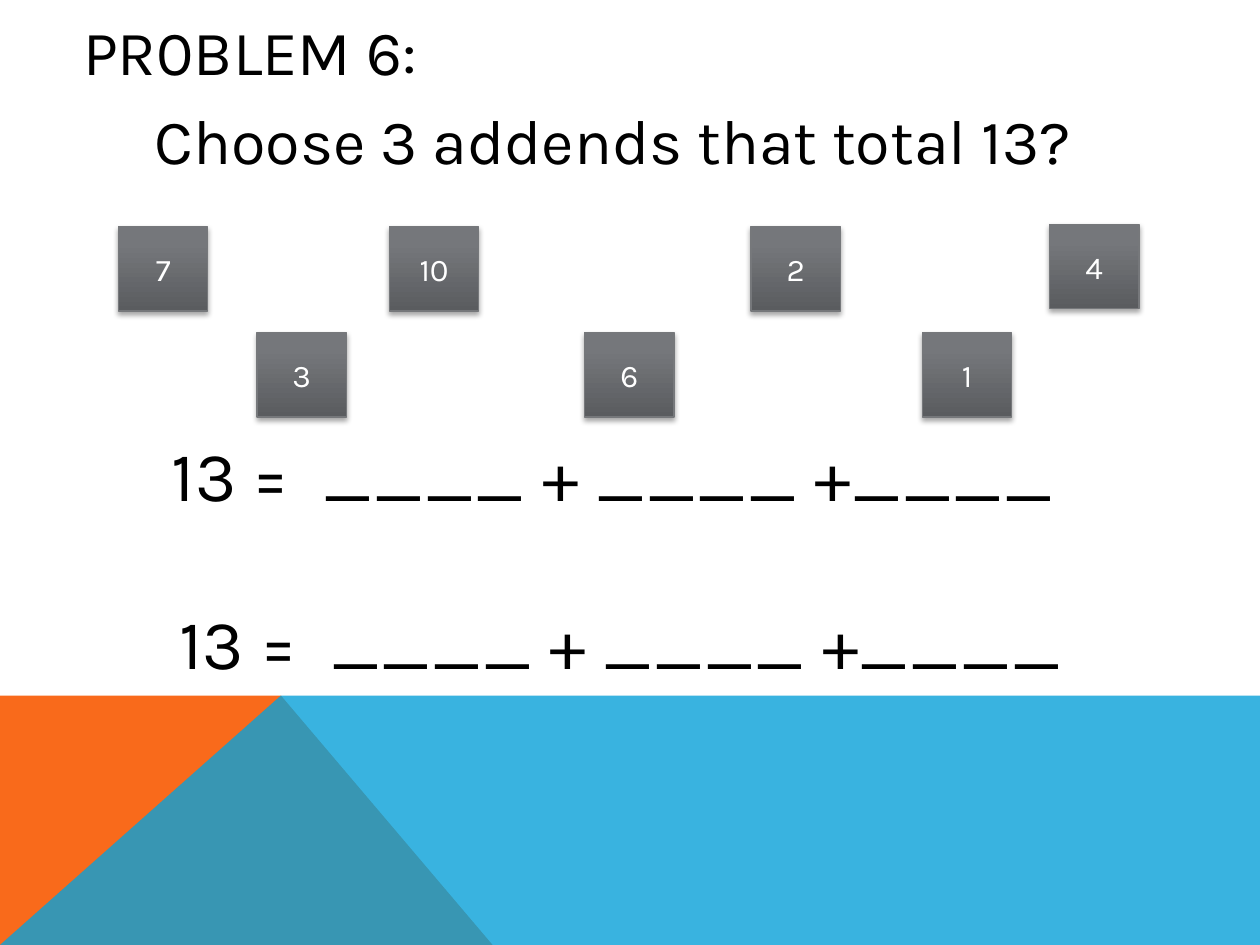
from lxml import etree
from pptx import Presentation
from pptx.dml.color import RGBColor
from pptx.enum.shapes import MSO_SHAPE
from pptx.enum.text import MSO_ANCHOR, PP_ALIGN
from pptx.oxml import parse_xml
from pptx.oxml.ns import nsdecls, qn
from pptx.util import Inches, Pt

RECT = MSO_SHAPE.RECTANGLE
MIDDLE = MSO_ANCHOR.MIDDLE
LEFT, CENTER = PP_ALIGN.LEFT, PP_ALIGN.CENTER

FONT = "Karla"
COLORS = {
    "text": "000000",
    "tile_text": "FFFFFF",
    "tile_line": "76787B",
    "tile_bottom": "5A5C5F",
    "tile_middle": "75777B",
    "tile_top": "75787C",
    "shadow": "000000",
    "orange": "F96A1B",
    "blue": "08A1D9",
}

# Bottom band
BAND_TOP, PEAK_X = 5.52, 2.23
ORANGE_POINTS = [(0, 7.5), (0, BAND_TOP), (PEAK_X, BAND_TOP), (3.91, 7.5)]
BLUE_POINTS = [(0, 7.5), (PEAK_X, BAND_TOP), (10, BAND_TOP), (10, 7.5)]

# Number tiles: label, left, top
TILE_W, TILE_H = 0.71, 0.67
UPPER, LOWER = 1.8, 2.64
TILES = [
    ("7", 0.94, UPPER), ("3", 2.04, LOWER), ("10", 3.09, UPPER),
    ("6", 4.64, LOWER), ("2", 5.96, UPPER), ("1", 7.32, LOWER),
    ("4", 8.33, 1.78),
]

# Centred lines: text, left, top, size
EQUATION = "13 =  ____ + ____ +____"
LINES = [
    ("Choose 3 addends that total 13?", 0.44, 0.73, 36),
    (EQUATION, 0.44, 3.38, 40),
    (EQUATION, 0.5, 4.71, 40),
]
LINE_W, LINE_H = 8.85, 0.76


def rgb(name):
    return RGBColor.from_string(COLORS[name])


def write_text(s, text, size, color, align):
    tf = s.text_frame
    tf.word_wrap = True
    tf.vertical_anchor = MIDDLE
    p = tf.paragraphs[0]
    p.alignment = align
    r = p.add_run()
    r.text = text
    for key, value in {"name": FONT, "size": Pt(size), "bold": False}.items():
        setattr(r.font, key, value)
    r.font.color.rgb = rgb(color)


def add_band_part(slide, points, color, alpha=None):
    corners = [(Inches(x), Inches(y)) for x, y in points]
    builder = slide.shapes.build_freeform(*corners[0])
    builder.add_line_segments(corners[1:], close=True)
    s = builder.convert_to_shape()
    s.shadow.inherit = False
    s.fill.solid()
    s.fill.fore_color.rgb = rgb(color)
    s.line.fill.background()
    if alpha is not None:
        clr = s.fill._xPr.find(qn("a:solidFill"))[0]
        etree.SubElement(clr, qn("a:alpha"), val=str(alpha * 1000))


def add_title(slide, text):
    s = slide.shapes.title
    s.left, s.top, s.width, s.height = map(Inches, (0.56, 0.1, 8.22, 0.6))
    write_text(s, text, 36, "text", LEFT)


def add_line(slide, text, left, top, size):
    s = slide.shapes.add_textbox(
        Inches(left), Inches(top), Inches(LINE_W), Inches(LINE_H))
    write_text(s, text, size, "text", CENTER)


def add_tile(slide, label, left, top):
    s = slide.shapes.add_shape(
        RECT, Inches(left), Inches(top), Inches(TILE_W), Inches(TILE_H))
    s.line.color.rgb = rgb("tile_line")
    s.line.width = Pt(0.75)
    write_text(s, label, 18, "tile_text", CENTER)

    # Three-stop gradient, running upwards
    stops = "".join(
        f'<a:gs pos="{pos * 1000}"><a:srgbClr val="{COLORS[name]}"/></a:gs>'
        for pos, name in ((0, "tile_bottom"), (80, "tile_middle"), (100, "tile_top")))
    gradient = parse_xml(
        f'<a:gradFill {nsdecls("a")} rotWithShape="1"><a:gsLst>{stops}</a:gsLst>'
        '<a:lin ang="16200000" scaled="0"/></a:gradFill>')
    sp_pr = s._element.spPr
    sp_pr.find(qn("a:prstGeom")).addnext(gradient)

    # Soft shadow straight below
    sp_pr.append(parse_xml(
        f'<a:effectLst {nsdecls("a")}><a:outerShdw blurRad="{Pt(3.1)}" '
        f'dist="{Pt(1.8)}" dir="5400000" rotWithShape="0">'
        f'<a:srgbClr val="{COLORS["shadow"]}"><a:alpha val="35000"/></a:srgbClr>'
        '</a:outerShdw></a:effectLst>'))


def main():
    prs = Presentation()
    prs.slide_width, prs.slide_height = Inches(10), Inches(7.5)
    slide = prs.slides.add_slide(prs.slide_layouts[5])

    add_band_part(slide, ORANGE_POINTS, "orange")
    add_band_part(slide, BLUE_POINTS, "blue", alpha=80)
    add_title(slide, "PR0BLEM 6:")
    for line in LINES:
        add_line(slide, *line)
    for tile in TILES:
        add_tile(slide, *tile)

    prs.save("out.pptx")


if __name__ == "__main__":
    main()
